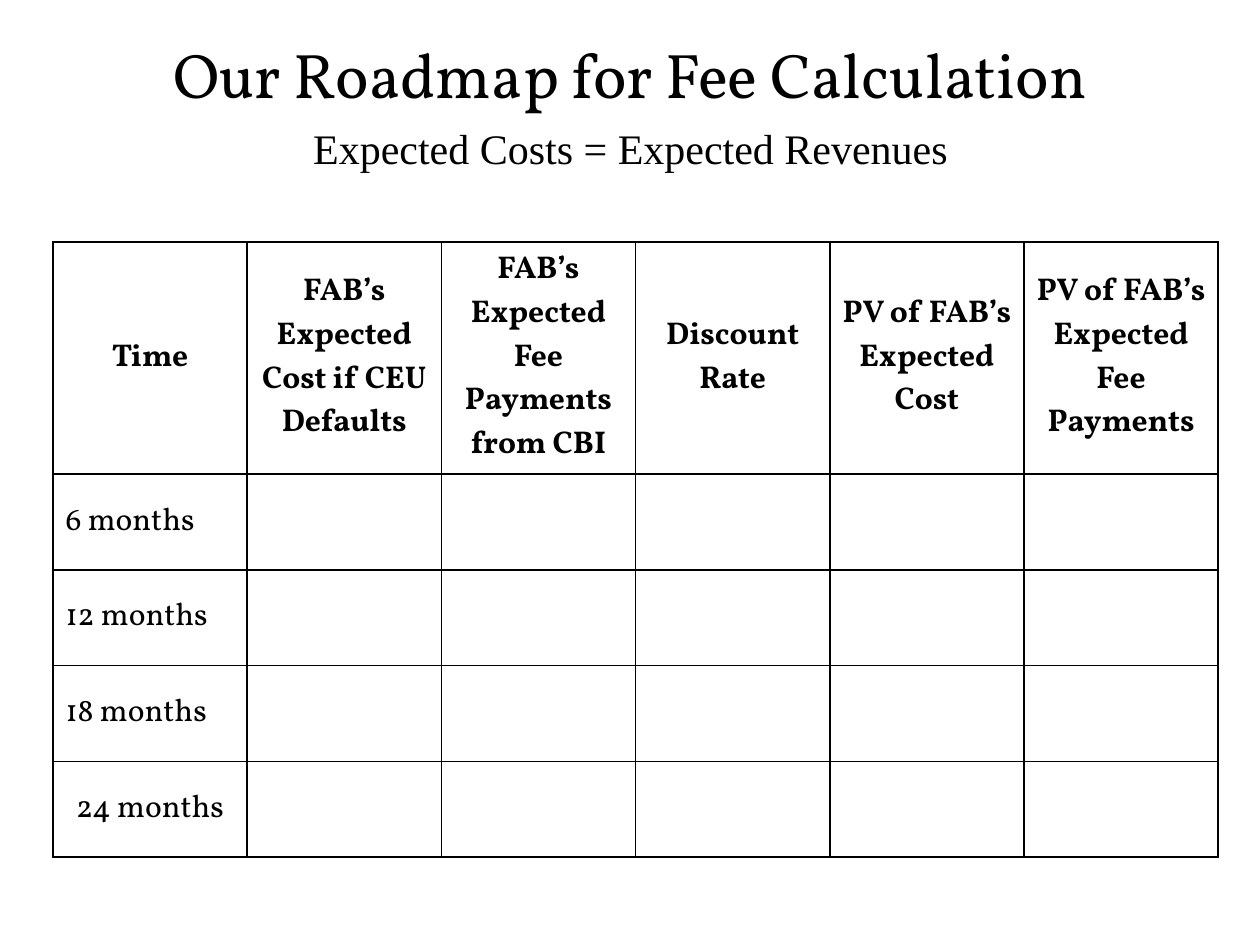
from lxml.etree import SubElement
from pptx import Presentation
from pptx.dml.color import RGBColor
from pptx.enum.text import MSO_ANCHOR, PP_ALIGN
from pptx.oxml.ns import qn
from pptx.util import Inches, Pt

TITLE = "Our Roadmap for Fee Calculation"
RULE = "Expected Costs = Expected Revenues"
HEADS = [
    "Time",
    "FAB’s Expected Cost if CEU Defaults",
    "FAB’s Expected Fee Payments from CBI",
    "Discount Rate",
    "PV of FAB’s Expected Cost",
    "PV of FAB’s Expected Fee Payments",
]
TIMES = [
    ("6 months", PP_ALIGN.LEFT),
    ("12 months", PP_ALIGN.LEFT),
    ("18 months", PP_ALIGN.LEFT),
    ("24 months", PP_ALIGN.CENTER),
]
INK, PAPER = "000000", "FFFFFF"
WIDE, HIGH = 10, 7.5
HEAD_H, ROW_H = 1.6, 0.76
FONTS = {
    "title": {"name": "Vollkorn", "size": Pt(36), "bold": False},
    "rule": {"name": "Times New Roman", "size": Pt(24), "bold": False},
    "head": {"name": "Vollkorn", "size": Pt(18), "bold": True},
    "time": {"name": "Vollkorn", "size": Pt(18), "bold": False},
}


def paint(fmt, tone):
    fmt.rgb = RGBColor.from_string(tone)


def write(frame, text, kind, align=PP_ALIGN.CENTER):
    para = frame.paragraphs[0]
    para.alignment = align
    run = para.add_run()
    run.text = text
    for key, val in FONTS[kind].items():
        setattr(run.font, key, val)
    paint(run.font.color, INK)


def place(shape, *box):
    for key, val in zip(("left", "top", "width", "height"), box):
        setattr(shape, key, Inches(val))


def edge(cell):
    props = cell._tc.get_or_add_tcPr()
    for spot, side in enumerate("LRTB"):
        line = SubElement(props, qn(f"a:ln{side}"), w=str(Pt(1)))
        fill = SubElement(line, qn("a:solidFill"))
        SubElement(fill, qn("a:srgbClr"), val=INK)
        props.insert(spot, line)


def grid(slide):
    count = len(TIMES) + 1
    tall = HEAD_H + ROW_H * len(TIMES)
    frame = slide.shapes.add_table(
        count, len(HEADS), Inches(0.42), Inches(1.92), Inches(9.25), Inches(tall)
    )
    table = frame.table
    for row in table.rows:
        row.height = Inches(ROW_H)
    table.rows[0].height = Inches(HEAD_H)
    for cell in table.iter_cells():
        cell.vertical_anchor = MSO_ANCHOR.MIDDLE
        cell.fill.solid()
        paint(cell.fill.fore_color, PAPER)
        edge(cell)
    for col, text in enumerate(HEADS):
        write(table.cell(0, col).text_frame, text, "head")
    for row, (text, align) in enumerate(TIMES, 1):
        write(table.cell(row, 0).text_frame, text, "time", align)


def main():
    deck = Presentation()
    deck.slide_width, deck.slide_height = Inches(WIDE), Inches(HIGH)
    slide = deck.slides.add_slide(deck.slide_layouts[5])
    title = slide.shapes.title
    place(title, 0.75, 0.08, WIDE * 0.85, 1)
    title.text_frame.vertical_anchor = MSO_ANCHOR.MIDDLE
    write(title.text_frame, TITLE, "title")
    grid(slide)
    rule = slide.shapes.add_textbox(0, 0, 0, 0)
    place(rule, 2.17, 0.92, 5.67, 0.51)
    rule.text_frame.word_wrap = True
    write(rule.text_frame, RULE, "rule")
    deck.save("out.pptx")


if __name__ == "__main__":
    main()
